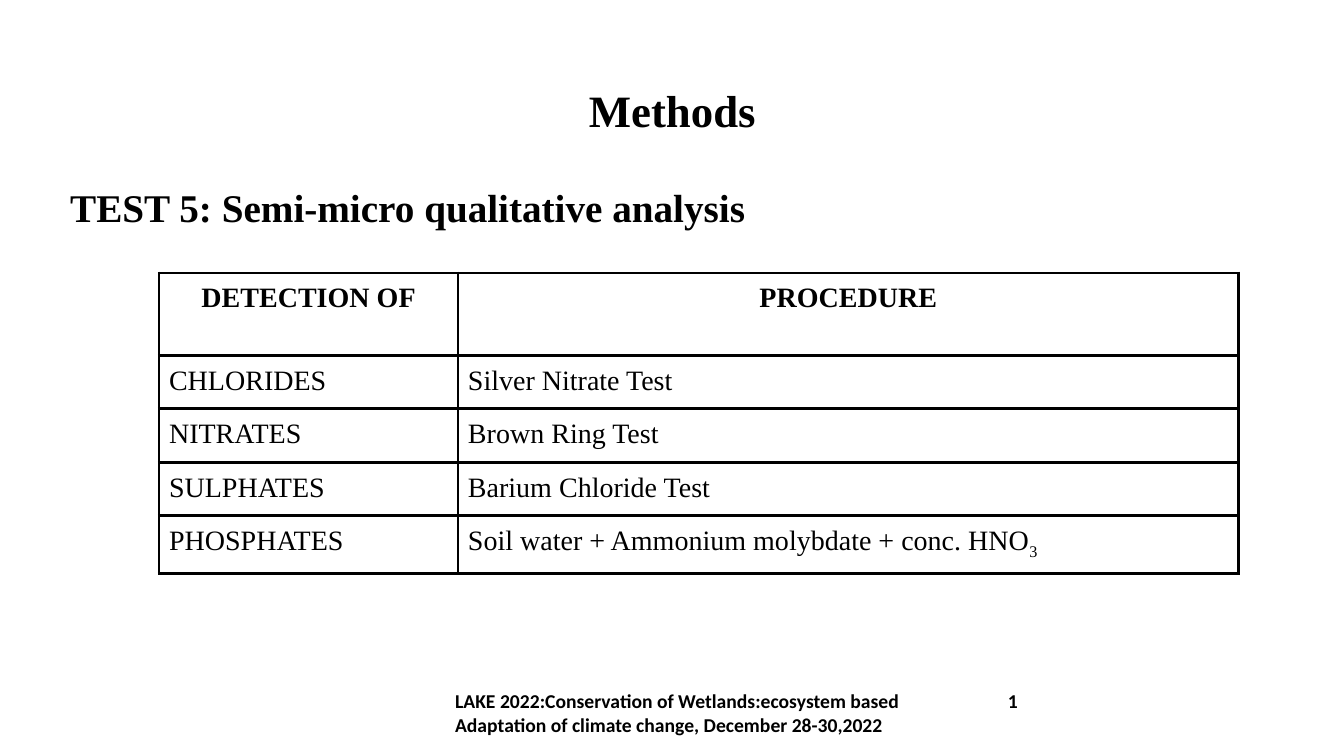
from lxml import etree
from pptx import Presentation
from pptx import util as u
from pptx.dml.color import RGBColor
from pptx.enum import text
from pptx.oxml.ns import qn

SERIF = "Times New Roman"
SANS = "Calibri"
BLACK = "000000"
WHITE = "FFFFFF"
INSET = u.Cm(0.25)
TESTS = [
    ("DETECTION OF", "PROCEDURE"),
    ("CHLORIDES", "Silver Nitrate Test"),
    ("NITRATES", "Brown Ring Test"),
    ("SULPHATES", "Barium Chloride Test"),
    ("PHOSPHATES", "Soil water + Ammonium molybdate + conc. HNO"),
]
COLUMN_SHARES = (0.277, 0.723)
ROW_HEIGHTS = (2.07, 1.29, 1.29, 1.29, 1.42)


def color(value):
    return RGBColor.from_string(value)


def format_font(font, name, size, bold):
    font.name = name
    font.size = u.Pt(size)
    font.bold = bold
    font.color.rgb = color(BLACK)


def add_text(slide, box, lines, name, size, spacing=1.0, align=text.PP_ALIGN.LEFT,
             anchor=text.MSO_ANCHOR.TOP, vertical_inset=0.13):
    shape = slide.shapes.add_textbox(*(u.Cm(length) for length in box))
    frame = shape.text_frame
    frame.word_wrap = True
    frame.vertical_anchor = anchor
    frame.margin_left = frame.margin_right = INSET
    frame.margin_top = frame.margin_bottom = u.Cm(vertical_inset)
    frame.text = "\n".join(lines)
    for paragraph in frame.paragraphs:
        paragraph.alignment = align
        paragraph.line_spacing = spacing
        for run in paragraph.runs:
            format_font(run.font, name, size, True)


def add_borders(cell, points):
    properties = cell._tc.get_or_add_tcPr()
    for index, side in enumerate(("a:lnL", "a:lnR", "a:lnT", "a:lnB")):
        line = etree.Element(qn(side), w=str(u.Pt(points)))
        fill = etree.SubElement(line, qn("a:solidFill"))
        etree.SubElement(fill, qn("a:srgbClr"), val=BLACK)
        properties.insert(index, line)


def add_tests_table(slide, box):
    left, top, width, height = box
    frame = slide.shapes.add_table(len(TESTS), len(COLUMN_SHARES),
                                   *(u.Cm(length) for length in box))
    table = frame.table
    for column, share in zip(table.columns, COLUMN_SHARES):
        column.width = u.Cm(width * share)
    for row, row_height in zip(table.rows, ROW_HEIGHTS):
        row.height = u.Cm(row_height)
    for row_index, entries in enumerate(TESTS):
        header = row_index == 0
        for column_index, entry in enumerate(entries):
            cell = table.cell(row_index, column_index)
            cell.margin_left = cell.margin_right = INSET
            cell.margin_top = cell.margin_bottom = INSET
            cell.fill.solid()
            cell.fill.fore_color.rgb = color(WHITE)
            add_borders(cell, 2.25)
            cell.text_frame.text = entry
            paragraph = cell.text_frame.paragraphs[0]
            paragraph.alignment = text.PP_ALIGN.CENTER if header else text.PP_ALIGN.LEFT
            format_font(paragraph.runs[0].font, SERIF, 20, header)
    subscript = paragraph.add_run()
    subscript.text = "3"
    format_font(subscript.font, SERIF, 20, False)
    subscript._r.get_or_add_rPr().set("baseline", "-25000")


def add_footer(slide, box):
    left, top, width, height = box
    number_offset = 13.93
    add_text(slide, (left, top, number_offset, height),
             ["LAKE 2022:Conservation of Wetlands:ecosystem based",
              "Adaptation of climate change, December 28-30,2022"],
             SANS, 14, vertical_inset=0.25)
    add_text(slide, (left + number_offset, top, width - number_offset, height),
             ["1"], SANS, 14, vertical_inset=0.25)


def add_methods_slide(presentation):
    slide = presentation.slides.add_slide(presentation.slide_layouts[6])
    slide.background.fill.solid()
    slide.background.fill.fore_color.rgb = color(WHITE)
    add_text(slide, (1.52, 4.32, 29.21, 2), ["TEST 5: Semi-micro qualitative analysis"],
             SERIF, 28, spacing=1.15)
    add_tests_table(slide, (4.01, 6.88, 27.2, sum(ROW_HEIGHTS)))
    add_footer(slide, (11.22, 17.12, 16, 1.9))
    add_text(slide, (2.34, 1.02, 29.21, 3.68), ["Methods"], SERIF, 32, spacing=0.9,
             align=text.PP_ALIGN.CENTER, anchor=text.MSO_ANCHOR.MIDDLE)


def main():
    presentation = Presentation()
    presentation.slide_width = u.Cm(33.87)
    presentation.slide_height = u.Cm(19.05)
    add_methods_slide(presentation)
    presentation.save("out.pptx")


if __name__ == "__main__":
    main()
